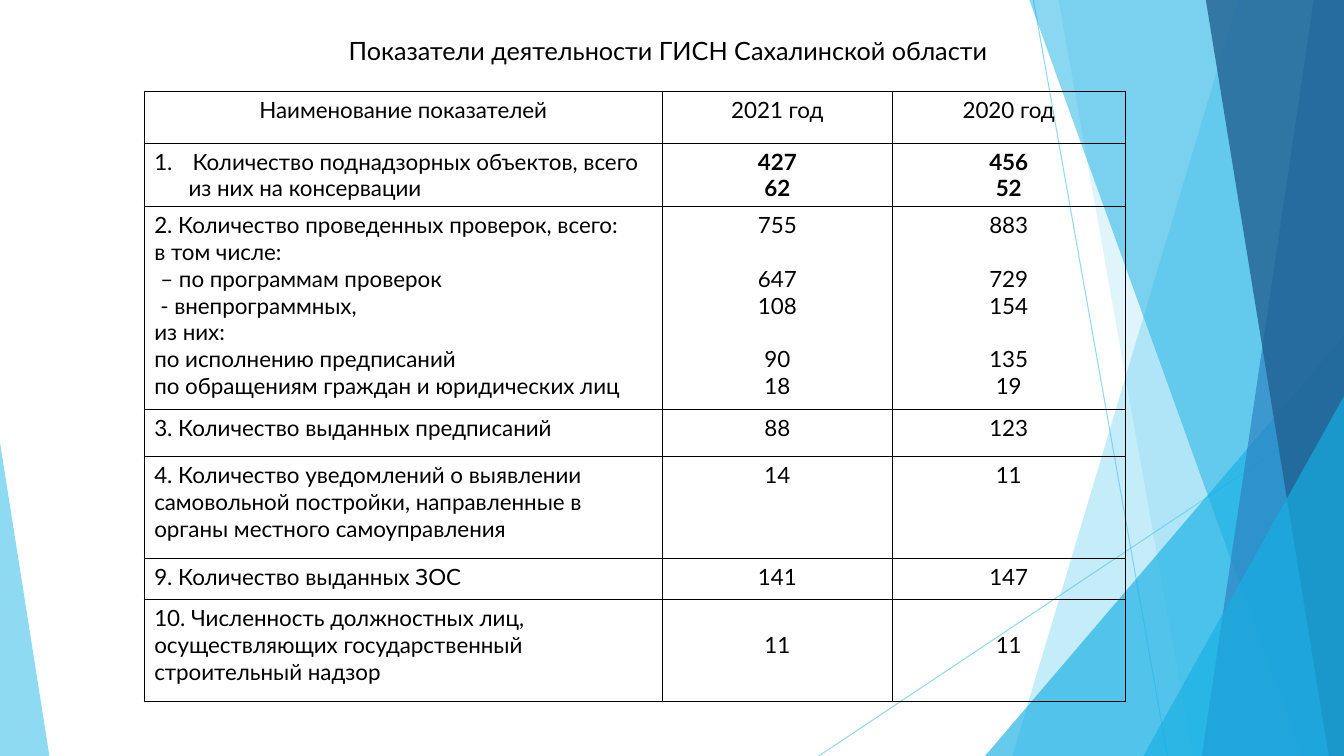
import pptx
import pptx.dml.color
import pptx.enum.shapes
import pptx.enum.text
import pptx.oxml.ns
import pptx.util
from lxml import etree

Inches = pptx.util.Inches
Pt = pptx.util.Pt
qn = pptx.oxml.ns.qn
SHAPE = pptx.enum.shapes.MSO_SHAPE
ALIGN = pptx.enum.text.PP_ALIGN

WIDE, HIGH = 13.33, 7.5
COLORS = {"ink": "000000", "sky": "5FCBEF", "aqua": "17B0E4",
          "blue": "2E83C3", "navy": "226292"}
GAP = None  # an open line between two figures


class Page:
    font = "Lato"
    size = 16
    pitch = 1.2  # line height as a share of the text size

    def __init__(self, slide):
        self.slide = slide
        self.shapes = slide.shapes

    def color(self, name):
        return pptx.dml.color.RGBColor.from_string(COLORS[name])

    def fade(self, shape, alpha):
        for tint in shape._element.spPr.iter(qn("a:srgbClr")):
            etree.SubElement(tint, qn("a:alpha"), val=str(alpha * 1000))

    def paint(self, shape, name, alpha):
        shape.shadow.inherit = False
        shape.fill.solid()
        shape.fill.fore_color.rgb = self.color(name)
        shape.line.fill.background()
        self.fade(shape, alpha)

    def line(self, x1, y1, x2, y2):
        line = self.shapes.add_connector(
            pptx.enum.shapes.MSO_CONNECTOR.STRAIGHT,
            Inches(x1), Inches(y1), Inches(x2), Inches(y2))
        line.line.color.rgb = self.color("sky")
        line.line.width = Pt(0.75)
        self.fade(line, 70)
        etree.SubElement(line._element.spPr, qn("a:effectLst"))

    def facet(self, top, base, name, alpha):
        """A slanted left edge, filled out to the right side of the slide."""
        form = self.shapes.build_freeform(Inches(top), 0)
        form.add_line_segments([(Inches(x), Inches(y)) for x, y in
                                ((WIDE, 0), (WIDE, HIGH), (base, HIGH))])
        self.paint(form.convert_to_shape(), name, alpha)

    def wedge(self, left, top, width, peak, name, alpha):
        """A triangle that stands on the bottom of the slide."""
        shape = self.shapes.add_shape(
            SHAPE.ISOSCELES_TRIANGLE, Inches(left), Inches(top),
            Inches(width), Inches(HIGH - top))
        shape.adjustments[0] = peak
        self.paint(shape, name, alpha)

    def add_text(self, par, text, size, bold=False):
        run = par.add_run()
        run.text = text
        run.font.name = self.font
        run.font.size = Pt(size)
        run.font.bold = bold
        run.font.color.rgb = self.color("ink")

    def title(self, text, left, top, width, height):
        box = self.shapes.title
        box.left, box.top = Inches(left), Inches(top)
        box.width, box.height = Inches(width), Inches(height)
        frame = box.text_frame
        frame.word_wrap = True
        frame.auto_size = pptx.enum.text.MSO_AUTO_SIZE.NONE
        frame.vertical_anchor = pptx.enum.text.MSO_ANCHOR.TOP
        par = frame.paragraphs[0]
        par.alignment = ALIGN.CENTER
        self.add_text(par, text, 18)
        self.shapes._spTree.append(box._element)  # bring to front

    def border(self, cell):
        props = cell._tc.get_or_add_tcPr()
        for spot, side in enumerate(("lnL", "lnR", "lnT", "lnB")):
            edge = etree.Element(qn("a:" + side), w=str(Pt(1)))
            fill = etree.SubElement(edge, qn("a:solidFill"))
            etree.SubElement(fill, qn("a:srgbClr"), val=COLORS["ink"])
            props.insert(spot, edge)

    def indent(self, par, left, hang=0):
        props = par._p.get_or_add_pPr()
        props.set("marL", str(Inches(left)))
        props.set("indent", str(-Inches(hang)))
        if hang:
            etree.SubElement(props, qn("a:buAutoNum"), type="arabicPeriod")

    def cell(self, cell, lines, align, bold):
        cell.fill.background()
        self.border(cell)
        step = Pt(self.size * self.pitch)
        frame = cell.text_frame
        par, skip = None, False
        for text in lines:
            if text is GAP:
                skip = True
                continue
            if par is None:
                par = frame.paragraphs[0]
                if skip:
                    cell.margin_top = Inches(0.05) + step
            else:
                par = frame.add_paragraph()
                if skip:
                    par.space_before = step
            skip = False
            par.alignment = align
            if text in INDENTS:
                self.indent(par, *INDENTS[text])
            self.add_text(par, text, self.size, bold)

    def table(self, left, top, cols, rows, data):
        grid = self.shapes.add_table(
            len(rows), len(cols), Inches(left), Inches(top),
            Inches(sum(cols)), Inches(sum(rows))).table
        grid.first_row = grid.horz_banding = False
        for col, width in zip(grid.columns, cols):
            col.width = Inches(width)
        for r, height in enumerate(rows):
            grid.rows[r].height = Inches(height)
            for c, lines in enumerate(data[r]):
                align = ALIGN.CENTER if r == 0 or c else ALIGN.LEFT
                self.cell(grid.cell(r, c), lines, align, r == 1 and c > 0)


# Left indent and hanging number, by line
INDENTS = {
    "Количество поднадзорных объектов, всего": (0.38, 0.38),
    "из них на консервации": (0.34,),
    "– по программам проверок": (0.06,),
    "- внепрограммных,": (0.06,),
}

DATA = [
    (["Наименование показателей"], ["2021 год"], ["2020 год"]),
    (["Количество поднадзорных объектов, всего", "из них на консервации"],
     ["427", "62"], ["456", "52"]),
    (["2. Количество проведенных проверок, всего:", "в том числе:",
      "– по программам проверок", "- внепрограммных,", "из них:",
      "по исполнению предписаний",
      "по обращениям граждан и юридических лиц"],
     ["755", GAP, "647", "108", GAP, "90", "18"],
     ["883", GAP, "729", "154", GAP, "135", "19"]),
    (["3. Количество выданных предписаний"], ["88"], ["123"]),
    (["4. Количество уведомлений о выявлении самовольной постройки, "
      "направленные в органы местного самоуправления"], ["14"], ["11"]),
    (["9. Количество выданных ЗОС"], ["141"], ["147"]),
    (["10. Численность должностных лиц, осуществляющих государственный "
      "строительный надзор"], [GAP, "11"], [GAP, "11"]),
]


def main():
    deck = pptx.Presentation()
    deck.slide_width, deck.slide_height = Inches(WIDE), Inches(HIGH)
    page = Page(deck.slides.add_slide(deck.slide_layouts[5]))

    # Backdrop, from back to front
    page.line(10.25, 0, 11.58, HIGH)
    page.line(WIDE, 4.03, 8.12, HIGH)
    page.facet(12.28, 10.04, "sky", 36)
    page.facet(10.5, 11.83, "sky", 20)
    page.wedge(9.77, 3.33, 3.56, 1, "aqua", 66)
    page.facet(10.21, 12.91, "aqua", 50)
    page.facet(13.03, 11.92, "blue", 70)
    page.facet(11.96, 13.18, "navy", 80)
    page.wedge(11.34, 3.93, 1.99, 1, "aqua", 66)
    page.wedge(0, 4.39, 0.49, 0, "sky", 70)

    # Title and table
    page.title("Показатели деятельности ГИСН Сахалинской области",
               2.13, 0.3, 8.99, 0.69)
    page.table(1.43, 0.91, (5.14, 2.28, 2.31),
               (0.51, 0.63, 2.01, 0.47, 1.01, 0.41, 1.01), DATA)

    deck.save("out.pptx")


if __name__ == "__main__":
    main()
